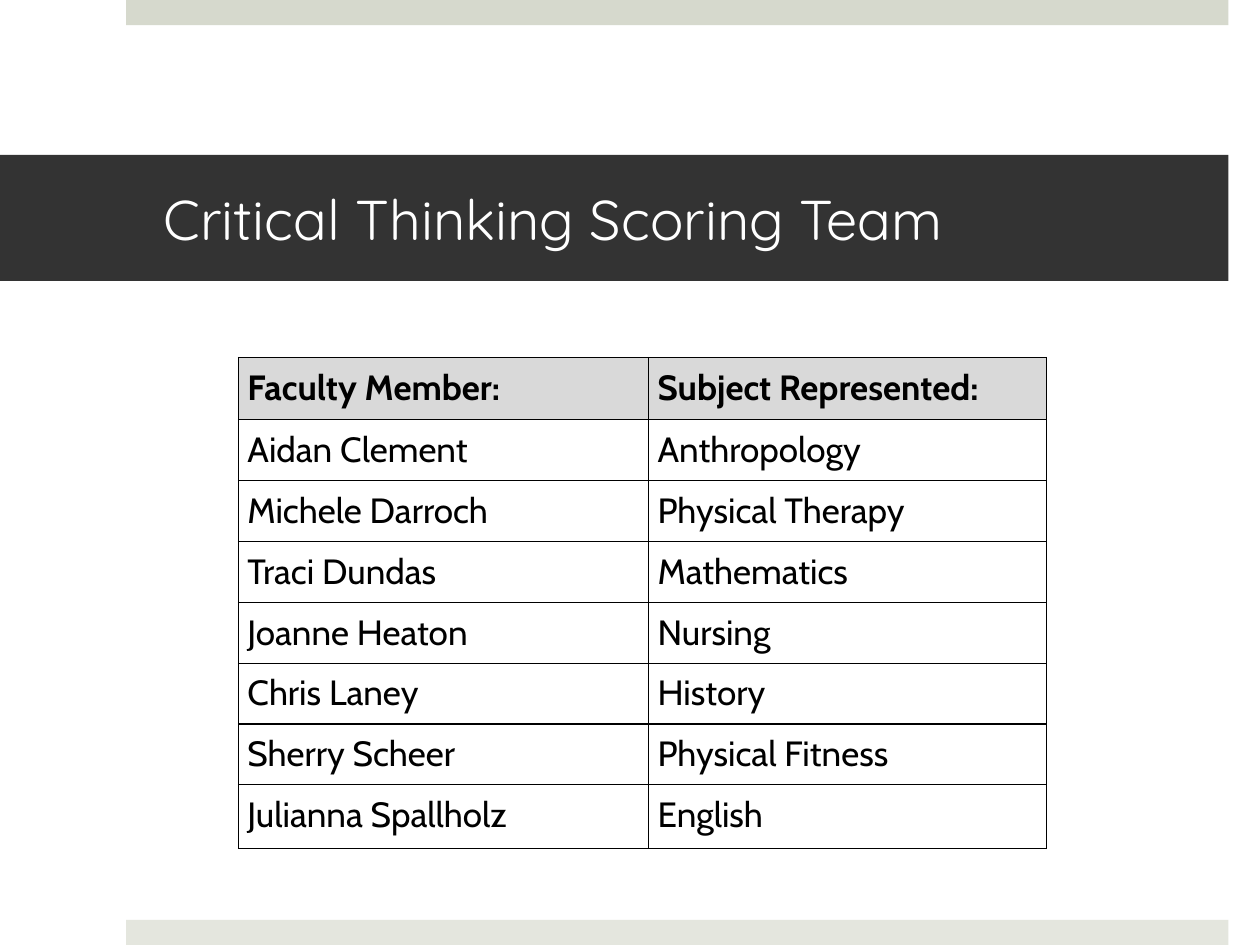
"""Build the Critical Thinking Scoring Team slide."""
from lxml.etree import SubElement
from pptx import Presentation
from pptx.dml.color import RGBColor
from pptx.enum.shapes import MSO_SHAPE
from pptx.enum.text import MSO_ANCHOR, MSO_AUTO_SIZE, PP_ALIGN
from pptx.oxml.ns import qn
from pptx.util import Pt

COLORS = {
    "top_bar": "D6D9CD",
    "bottom_bar": "E4E6DE",
    "banner": "333333",
    "title": "FFFFFF",
    "header": "D9D9D9",
    "ink": "000000",
}
TITLE = "Critical Thinking Scoring Team"
TEAM = [
    ("Faculty Member:", "Subject Represented:"),
    ("Aidan Clement", "Anthropology"),
    ("Michele Darroch", "Physical Therapy"),
    ("Traci Dundas", "Mathematics"),
    ("Joanne Heaton", "Nursing"),
    ("Chris Laney", "History"),
    ("Sherry Scheer", "Physical Fitness"),
    ("Julianna Spallholz", "English"),
]
SLIDE_WIDTH, SLIDE_HEIGHT = 720, 540
BAR_LEFT, BAR_HEIGHT, RIGHT_EDGE = 72, 14.4, 702
COLUMN_WIDTHS = (234.4, 227.4)
ROW_HEIGHTS = [35.6] + [34.4] * (len(TEAM) - 2) + [36.6]
CELL_MARGIN = 5.2


def color(name):
    return RGBColor.from_string(COLORS[name])


def style_text(paragraph, font_name, size, color_name, bold=False):
    paragraph.alignment = PP_ALIGN.LEFT
    font = paragraph.font
    font.name, font.size, font.bold = font_name, Pt(size), bold
    font.color.rgb = color(color_name)


def add_bar(slide, top, color_name):
    bar = slide.shapes.add_shape(
        MSO_SHAPE.RECTANGLE, Pt(BAR_LEFT), Pt(top), Pt(RIGHT_EDGE - BAR_LEFT), Pt(BAR_HEIGHT))
    bar.shadow.inherit = False
    bar.fill.solid()
    bar.fill.fore_color.rgb = color(color_name)
    bar.line.fill.background()


def fill_title(title):
    title.left, title.top, title.width, title.height = Pt(0), Pt(88.5), Pt(RIGHT_EDGE), Pt(72)
    title.fill.solid()
    title.fill.fore_color.rgb = color("banner")
    frame = title.text_frame
    frame.text = TITLE
    frame.word_wrap = True
    frame.auto_size = MSO_AUTO_SIZE.NONE
    frame.vertical_anchor = MSO_ANCHOR.MIDDLE
    frame.margin_left, frame.margin_right = Pt(93.6), Pt(21.6)
    frame.margin_top = frame.margin_bottom = Pt(3.6)
    style_text(frame.paragraphs[0], "Quicksand", 32, "title")


def add_borders(cell):
    properties = cell._tc.get_or_add_tcPr()
    for side in ("a:lnL", "a:lnR", "a:lnT", "a:lnB"):
        border = SubElement(properties, qn(side), w=str(Pt(0.75)))
        SubElement(SubElement(border, qn("a:solidFill")), qn("a:srgbClr"), val=COLORS["ink"])


def fill_cell(cell, text, is_header):
    cell.text = text
    cell.margin_left = cell.margin_right = Pt(CELL_MARGIN)
    cell.margin_top = cell.margin_bottom = Pt(CELL_MARGIN)
    style_text(cell.text_frame.paragraphs[0], "Cabin", 20, "ink", is_header)
    add_borders(cell)
    if is_header:
        cell.fill.solid()
        cell.fill.fore_color.rgb = color("header")
    else:
        cell.fill.background()


def add_team_table(slide):
    team_table = slide.shapes.add_table(
        len(TEAM), len(COLUMN_WIDTHS), Pt(136.2), Pt(204.2),
        Pt(sum(COLUMN_WIDTHS)), Pt(sum(ROW_HEIGHTS))).table
    team_table.horz_banding = False
    for column, width in zip(team_table.columns, COLUMN_WIDTHS):
        column.width = Pt(width)
    for index, (row, height, entry) in enumerate(zip(team_table.rows, ROW_HEIGHTS, TEAM)):
        row.height = Pt(height)
        for cell, text in zip(row.cells, entry):
            fill_cell(cell, text, index == 0)


def main():
    presentation = Presentation()
    presentation.slide_width, presentation.slide_height = Pt(SLIDE_WIDTH), Pt(SLIDE_HEIGHT)
    slide = presentation.slides.add_slide(presentation.slide_layouts[5])
    add_bar(slide, 0, "top_bar")
    add_bar(slide, SLIDE_HEIGHT - BAR_HEIGHT, "bottom_bar")
    fill_title(slide.shapes.title)
    add_team_table(slide)
    presentation.save("out.pptx")


if __name__ == "__main__":
    main()
